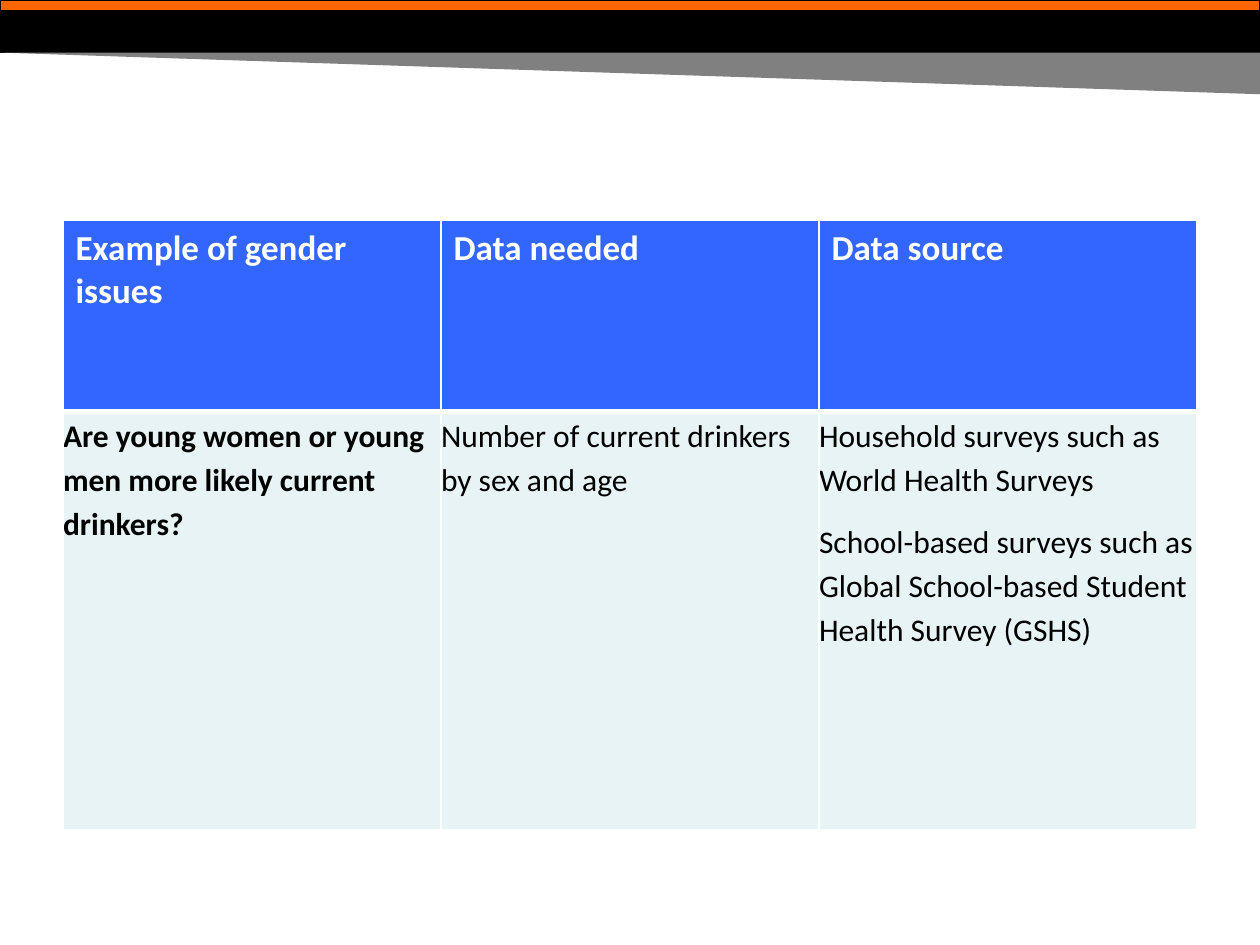
"""Build a slide with a table of gender issues, data needed and data sources."""
from lxml import etree
from pptx import Presentation
from pptx.dml.color import RGBColor
from pptx.enum.shapes import MSO_SHAPE
from pptx.oxml.ns import qn
from pptx.util import Cm, Pt

RECT = MSO_SHAPE.RECTANGLE
TRIANGLE = MSO_SHAPE.RIGHT_TRIANGLE
COLORS = {
    "black": "000000",
    "gray": "808080",
    "orange": "FF6600",
    "header": "3366FF",
    "body": "E7F3F4",
    "white": "FFFFFF",
}
WIDTH = 25.4


def rgb(name):
    return RGBColor.from_string(COLORS[name])


def add_borders(cell, top, bottom):
    tc_pr = cell._tc.get_or_add_tcPr()
    for side, width in (("L", 1), ("R", 1), ("T", top), ("B", bottom)):
        ln = etree.SubElement(tc_pr, qn(f"a:ln{side}"), w=str(Pt(width)))
        fill = etree.SubElement(ln, qn("a:solidFill"))
        etree.SubElement(fill, qn("a:srgbClr"), val=COLORS["white"])


prs = Presentation()
prs.slide_width, prs.slide_height = Cm(WIDTH), Cm(19.05)
s = prs.slides.add_slide(prs.slide_layouts[6])

bands = [
    (RECT, 0, 1.06, "black", 0.75, 0),
    (TRIANGLE, 1.06, 0.84, "gray", 0, 180),
    (RECT, 0, 0.21, "orange", 0.5, 0),
]
for shape, top, height, color, line, rotation in bands:
    sp = s.shapes.add_shape(shape, Cm(0), Cm(top), Cm(WIDTH), Cm(height))
    sp.shadow.inherit = False
    sp.rotation = rotation
    sp.fill.solid()
    sp.fill.fore_color.rgb = rgb(color)
    if line:
        sp.line.color.rgb = rgb("black")
        sp.line.width = Pt(line)
    else:
        sp.line.fill.background()

rows = [
    [["Example of gender issues"], ["Data needed"], ["Data source"]],
    [
        ["Are young women or young men more likely current drinkers?"],
        ["Number of current drinkers by sex and age"],
        [
            "Household surveys such as World Health Surveys",
            "School-based surveys such as Global School-based Student Health Survey (GSHS)",
        ],
    ],
]
heights = [3.85, 8.42]
table = s.shapes.add_table(
    2, 3, Cm(1.27), Cm(4.45), Cm(22.86), Cm(sum(heights))
).table
for row, height in zip(table.rows, heights):
    row.height = Cm(height)

for i, row in enumerate(rows):
    header = i == 0
    for j, paragraphs in enumerate(row):
        cell = table.cell(i, j)
        add_borders(cell, 1 if header else 3, 3 if header else 1)
        cell.fill.solid()
        cell.fill.fore_color.rgb = rgb("header" if header else "body")
        if not header:
            cell.margin_left = cell.margin_right = Cm(0)
            cell.margin_top = cell.margin_bottom = Cm(0)
        tf = cell.text_frame
        tf.text = "\n".join(paragraphs)
        for p in tf.paragraphs:
            p.font.name = "Calibri"
            p.font.size = Pt(20 if header else 18)
            p.font.bold = header or j == 0
            p.font.color.rgb = rgb("white" if header else "black")
            if not header:
                p.line_spacing = 1.15
                p.space_after = Pt(10)

prs.save("out.pptx")
